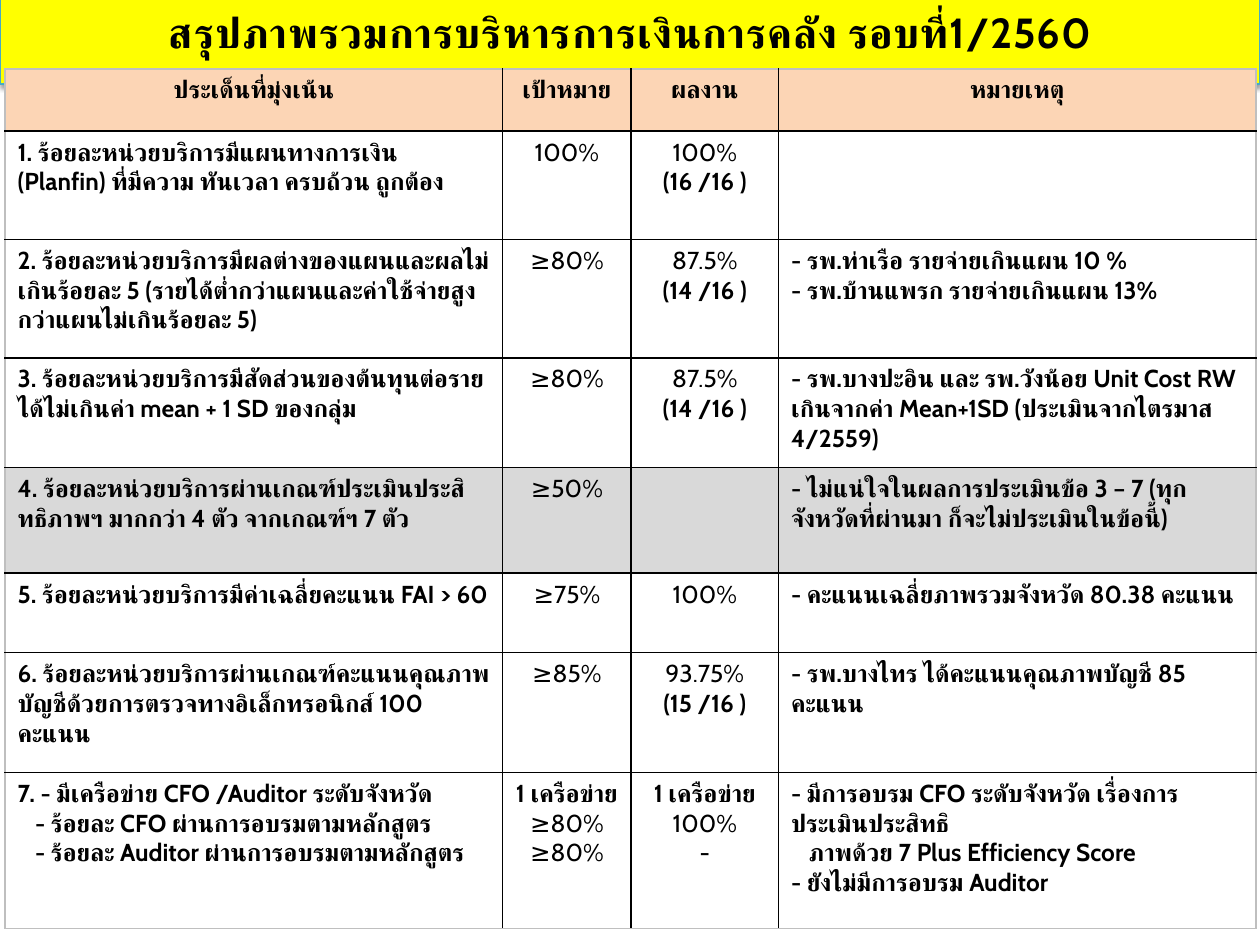
"""Build the one-slide overview of provincial financial management results."""
import dataclasses

import lxml.etree
import pptx
import pptx.dml.color
import pptx.enum.text
import pptx.oxml.ns
import pptx.util

Pt = pptx.util.Pt
ALIGN = pptx.enum.text.PP_ALIGN
INDENT_MARK = "\t"


@dataclasses.dataclass(frozen=True)
class Theme:
    font: str = "Cabin"
    title_size: float = 24
    body_size: float = 14
    ink: str = "000000"
    banner: str = "FFFF00"
    banner_edge: str = "46AAC5"
    header: str = "FCD5B5"
    muted: str = "D9D9D9"
    frame: str = "BFBFBF"


THEME = Theme()
COLUMN_WIDTHS = [284.4, 73.4, 84.2, 272.9]
ROW_HEIGHTS = [35.5, 61.9, 67.7, 62.6, 60.5, 45.4, 68.4, 89.3]
CENTRED_COLUMNS = (1, 2)
UNASSESSED_ROW = 4
HEADINGS = ["ประเด็นที่มุ่งเน้น", "เป้าหมาย", "ผลงาน", "หมายเหตุ"]
INDICATORS = [
    ["1. ร้อยละหน่วยบริการมีแผนทางการเงิน (Planfin) ที่มีความ ทันเวลา ครบถ้วน ถูกต้อง",
     "100%", "100%\n(16 /16 )", ""],
    ["2. ร้อยละหน่วยบริการมีผลต่างของแผนและผลไม่เกินร้อยละ 5 "
     "(รายได้ต่ำกว่าแผนและค่าใช้จ่ายสูงกว่าแผนไม่เกินร้อยละ 5)",
     "≥80%", "87.5%\n(14 /16 )",
     "- รพ.ท่าเรือ รายจ่ายเกินแผน 10 %\n- รพ.บ้านแพรก รายจ่ายเกินแผน 13%"],
    ["3. ร้อยละหน่วยบริการมีสัดส่วนของต้นทุนต่อรายได้ไม่เกินค่า mean + 1 SD ของกลุ่ม",
     "≥80%", "87.5%\n(14 /16 )",
     "- รพ.บางปะอิน และ รพ.วังน้อย Unit Cost RW เกินจากค่า Mean+1SD "
     "(ประเมินจากไตรมาส 4/2559)"],
    ["4. ร้อยละหน่วยบริการผ่านเกณฑ์ประเมินประสิทธิภาพฯ มากกว่า 4 ตัว จากเกณฑ์ฯ 7 ตัว",
     "≥50%", "",
     "- ไม่แน่ใจในผลการประเมินข้อ 3 – 7 (ทุกจังหวัดที่ผ่านมา ก็จะไม่ประเมินในข้อนี้)"],
    ["5. ร้อยละหน่วยบริการมีค่าเฉลี่ยคะแนน FAI > 60",
     "≥75%", "100%", "- คะแนนเฉลี่ยภาพรวมจังหวัด 80.38 คะแนน"],
    ["6. ร้อยละหน่วยบริการผ่านเกณฑ์คะแนนคุณภาพบัญชีด้วยการตรวจทางอิเล็กทรอนิกส์ 100 คะแนน",
     "≥85%", "93.75%\n(15 /16 )", "- รพ.บางไทร ได้คะแนนคุณภาพบัญชี 85 คะแนน"],
    ["7. - มีเครือข่าย CFO /Auditor ระดับจังหวัด\n"
     "\t- ร้อยละ CFO ผ่านการอบรมตามหลักสูตร\n"
     "\t- ร้อยละ Auditor ผ่านการอบรมตามหลักสูตร",
     "1 เครือข่าย\n≥80%\n≥80%", "1 เครือข่าย\n100%\n-",
     "- มีการอบรม CFO ระดับจังหวัด เรื่องการประเมินประสิทธิ\n"
     "\tภาพด้วย 7 Plus Efficiency Score\n- ยังไม่มีการอบรม Auditor"],
]


def rgb(value):
    return pptx.dml.color.RGBColor.from_string(value)


def add_element(parent, tag, **attributes):
    child = lxml.etree.SubElement(parent, pptx.oxml.ns.qn(tag))
    for key, value in attributes.items():
        child.set(key, str(value))
    return child


def write(paragraph, text, size=THEME.body_size, bold=True, align=ALIGN.LEFT,
          indent=0, spacing=0):
    paragraph.alignment = align
    if indent:
        properties = paragraph._p.get_or_add_pPr()
        properties.set("marL", str(Pt(indent)))
        properties.set("indent", "0")
    run = paragraph.add_run()
    run.text = text
    run.font.size = Pt(size)
    run.font.bold = bold
    run.font.name = THEME.font
    run.font.color.rgb = rgb(THEME.ink)
    properties = run._r.get_or_add_rPr()
    add_element(properties, "a:cs", typeface=THEME.font)
    if spacing:
        properties.set("spc", str(int(spacing * 100)))


class SlideBuilder:
    def __init__(self, theme, slide):
        self.theme = theme
        self.slide = slide

    def title(self, text, left, top, width, height):
        banner = self.slide.shapes.title
        banner.left, banner.top = Pt(left), Pt(top)
        banner.width, banner.height = Pt(width), Pt(height)
        banner.fill.solid()
        banner.fill.fore_color.rgb = rgb(self.theme.banner)
        banner.line.color.rgb = rgb(self.theme.banner_edge)
        banner.line.width = Pt(0.75)
        effects = add_element(banner._element.spPr, "a:effectLst")
        shadow = add_element(effects, "a:outerShdw", blurRad=Pt(3.1), dist=Pt(1.6),
                             dir=90 * 60000, rotWithShape=0)
        tint = add_element(shadow, "a:srgbClr", val=self.theme.ink)
        add_element(tint, "a:alpha", val=38000)
        frame = banner.text_frame
        frame.word_wrap = True
        frame.auto_size = pptx.enum.text.MSO_AUTO_SIZE.SHAPE_TO_FIT_TEXT
        frame.vertical_anchor = pptx.enum.text.MSO_ANCHOR.MIDDLE
        write(frame.paragraphs[0], text, size=self.theme.title_size,
              align=ALIGN.CENTER, spacing=0.5)

    def table(self, rows, left, top, widths, heights):
        grid = self.slide.shapes.add_table(
            len(rows), len(widths), Pt(left), Pt(top),
            Pt(sum(widths)), Pt(sum(heights))).table
        grid.first_row = grid.horz_banding = False
        for column, width in zip(grid.columns, widths):
            column.width = Pt(width)
        for row, height in zip(grid.rows, heights):
            row.height = Pt(height)
        last_row, last_column = len(rows) - 1, len(widths) - 1
        fills = {0: self.theme.header, UNASSESSED_ROW: self.theme.muted}
        for r, entries in enumerate(rows):
            for c, entry in enumerate(entries):
                cell = grid.cell(r, c)
                self.borders(cell, lnL=c == 0, lnR=c == last_column,
                             lnT=r == 0, lnB=r == last_row)
                if r in fills:
                    cell.fill.solid()
                    cell.fill.fore_color.rgb = rgb(fills[r])
                else:
                    cell.fill.background()
                self.cell_text(cell, entry, r == 0 or c in CENTRED_COLUMNS)

    def borders(self, cell, **outer_sides):
        properties = cell._tc.get_or_add_tcPr()
        for side, outer in outer_sides.items():
            edge = add_element(properties, f"a:{side}", w=Pt(1))
            paint = add_element(edge, "a:solidFill")
            add_element(paint, "a:srgbClr",
                        val=self.theme.frame if outer else self.theme.ink)

    def cell_text(self, cell, entry, centred):
        if not entry:
            return
        frame = cell.text_frame
        for number, line in enumerate(entry.split("\n")):
            paragraph = frame.add_paragraph() if number else frame.paragraphs[0]
            is_figure = centred and line.endswith(("%", "-"))
            write(paragraph, line.lstrip(INDENT_MARK), bold=not is_figure,
                  align=ALIGN.CENTER if centred else ALIGN.LEFT,
                  indent=10 if line.startswith(INDENT_MARK) else 0)


def main():
    deck = pptx.Presentation()
    deck.slide_width, deck.slide_height = Pt(720), Pt(540)
    builder = SlideBuilder(THEME, deck.slides.add_slide(deck.slide_layouts[5]))
    builder.title("สรุปภาพรวมการบริหารการเงินการคลัง รอบที่1/2560", 0, 0, 720, 36)
    builder.table([HEADINGS, *INDICATORS], 2.9, 39.4, COLUMN_WIDTHS, ROW_HEIGHTS)
    deck.save("out.pptx")


if __name__ == "__main__":
    main()
